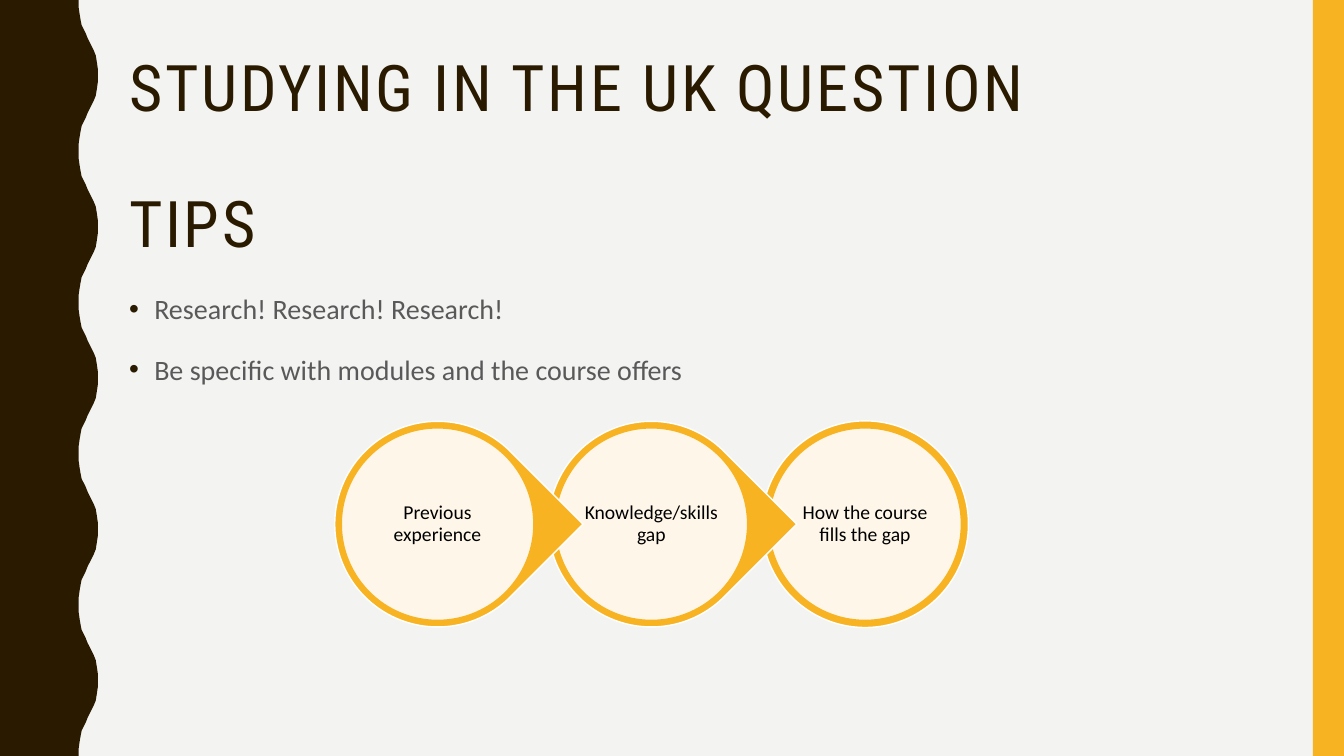
from lxml.etree import SubElement
from pptx import Presentation
from pptx.dml.color import RGBColor
from pptx.enum.shapes import MSO_SHAPE
from pptx.enum.text import MSO_ANCHOR, MSO_AUTO_SIZE, PP_ALIGN
from pptx.oxml.ns import qn
from pptx.util import Inches, Pt

TITLE = "STUDYING IN THE UK QUESTION \v\vTIPS"
TIPS = [
    "Research! Research! Research!",
    "Be specific with modules and the course offers",
]
STAGES = ["Previous experience", "Knowledge/skills gap", "How the course fills the gap"]

COLORS = {
    "background": "F3F3F2",
    "brown": "2A1A00",
    "amber": "F8B323",
    "white": "FFFFFF",
    "grey": "595959",
    "black": "000000",
}
HEADING_FONT, BODY_FONT = "Roboto Condensed", "Calibri"

SLIDE_W, SLIDE_H = 13.33, 7.5
WAVE_PERIOD = 1.5
HALF_WAVE = [
    (0.78, 0), (0.78, 0.07), (0.79, 0.14), (0.8, 0.2), (0.81, 0.25),
    (0.83, 0.29), (0.85, 0.33), (0.87, 0.38), (0.89, 0.42), (0.91, 0.46),
    (0.93, 0.5), (0.95, 0.55), (0.96, 0.61), (0.97, 0.68), (0.97, 0.75),
]
STAGE_X, STAGE_Y, STAGE_PITCH = 4.34, 5.2, 2.12
DROP_SIZE, LAST_SIZE, DISC_SIZE, LABEL_SIZE = 2.04, 2.05, 1.91, 1.37


def rgb(name):
    return RGBColor.from_string(COLORS[name])


def paint(shape, fill, line=None):
    shape.shadow.inherit = False
    shape.fill.solid()
    shape.fill.fore_color.rgb = rgb(fill)
    if line:
        shape.line.color.rgb = rgb(line)
        shape.line.width = Pt(1)
    else:
        shape.line.fill.background()


def style(font, name, size, color):
    font.name, font.size = name, Pt(size)
    font.color.rgb = rgb(color)


def place(placeholder, left, top, width, height):
    placeholder.left, placeholder.top = Inches(left), Inches(top)
    placeholder.width, placeholder.height = Inches(width), Inches(height)
    frame = placeholder.text_frame
    frame.auto_size = MSO_AUTO_SIZE.NONE
    frame.vertical_anchor = MSO_ANCHOR.TOP
    return frame


def centered(x, size):
    return Inches(x - size / 2), Inches(STAGE_Y - size / 2), Inches(size), Inches(size)


def add_wave(slide):
    there_and_back = HALF_WAVE + [(x, WAVE_PERIOD - y) for x, y in HALF_WAVE[-2::-1]]
    edge = [
        (Inches(x), Inches(y + period * WAVE_PERIOD))
        for period in range(round(SLIDE_H / WAVE_PERIOD))
        for x, y in there_and_back
    ]
    outline = slide.shapes.build_freeform(0, 0)
    outline.add_line_segments(edge + [(0, Inches(SLIDE_H))], close=True)
    paint(outline.convert_to_shape(), "brown")


def add_title(slide):
    frame = place(slide.shapes.title, 1.18, 0.51, 10.42, 1.65)
    frame.text = TITLE
    heading = frame.paragraphs[0]
    heading.alignment = PP_ALIGN.LEFT
    heading.line_spacing = 0.9
    for run in heading.runs:
        style(run.font, HEADING_FONT, 45.9, "brown")
        run.font._element.set("spc", "200")


def add_tips(slide):
    frame = place(slide.placeholders[1], 1.18, 2.68, 11.74, 3.23)
    frame.text = "\n".join(TIPS)
    for tip in frame.paragraphs:
        properties = tip._p.get_or_add_pPr()
        properties.set("marL", str(Inches(0.25)))
        properties.set("indent", str(-Inches(0.25)))
        bullet_color = SubElement(properties, qn("a:buClr"))
        SubElement(bullet_color, qn("a:srgbClr"), val=COLORS["brown"])
        SubElement(properties, qn("a:buChar"), char="•")
        tip.line_spacing = 1.5
        tip.space_before = Pt(7)
        style(tip.font, BODY_FONT, 20, "grey")


def add_stage(group, x, text, is_last):
    if is_last:
        ring = group.shapes.add_shape(MSO_SHAPE.OVAL, *centered(x, LAST_SIZE))
    else:
        ring = group.shapes.add_shape(MSO_SHAPE.TEAR, *centered(x, DROP_SIZE))
        ring.rotation = 45
    paint(ring, "amber", "white")

    disc = group.shapes.add_shape(MSO_SHAPE.OVAL, *centered(x, DISC_SIZE))
    paint(disc, "white", "amber")
    disc_color = disc._element.spPr.find(qn("a:solidFill"))[0]
    SubElement(disc_color, qn("a:alpha"), val="90000")

    frame = group.shapes.add_textbox(*centered(x, LABEL_SIZE)).text_frame
    frame.word_wrap = True
    frame.vertical_anchor = MSO_ANCHOR.MIDDLE
    frame.margin_left = frame.margin_right = Inches(0.02)
    frame.margin_top = frame.margin_bottom = Inches(0.02)
    frame.text = text
    label = frame.paragraphs[0]
    label.alignment = PP_ALIGN.CENTER
    label.line_spacing = 0.9
    style(label.font, BODY_FONT, 14, "black")


def main():
    deck = Presentation()
    deck.slide_width, deck.slide_height = Inches(SLIDE_W), Inches(SLIDE_H)
    slide = deck.slides.add_slide(deck.slide_layouts[1])
    slide.background.fill.solid()
    slide.background.fill.fore_color.rgb = rgb("background")

    add_wave(slide)
    side_bar = slide.shapes.add_shape(
        MSO_SHAPE.RECTANGLE, Inches(13.02), 0, Inches(0.31), Inches(SLIDE_H)
    )
    paint(side_bar, "amber")
    add_title(slide)
    add_tips(slide)

    process = slide.shapes.add_group_shape()
    last = len(STAGES) - 1
    for index in range(last, -1, -1):
        add_stage(process, STAGE_X + index * STAGE_PITCH, STAGES[index], index == last)

    deck.save("out.pptx")


if __name__ == "__main__":
    main()
